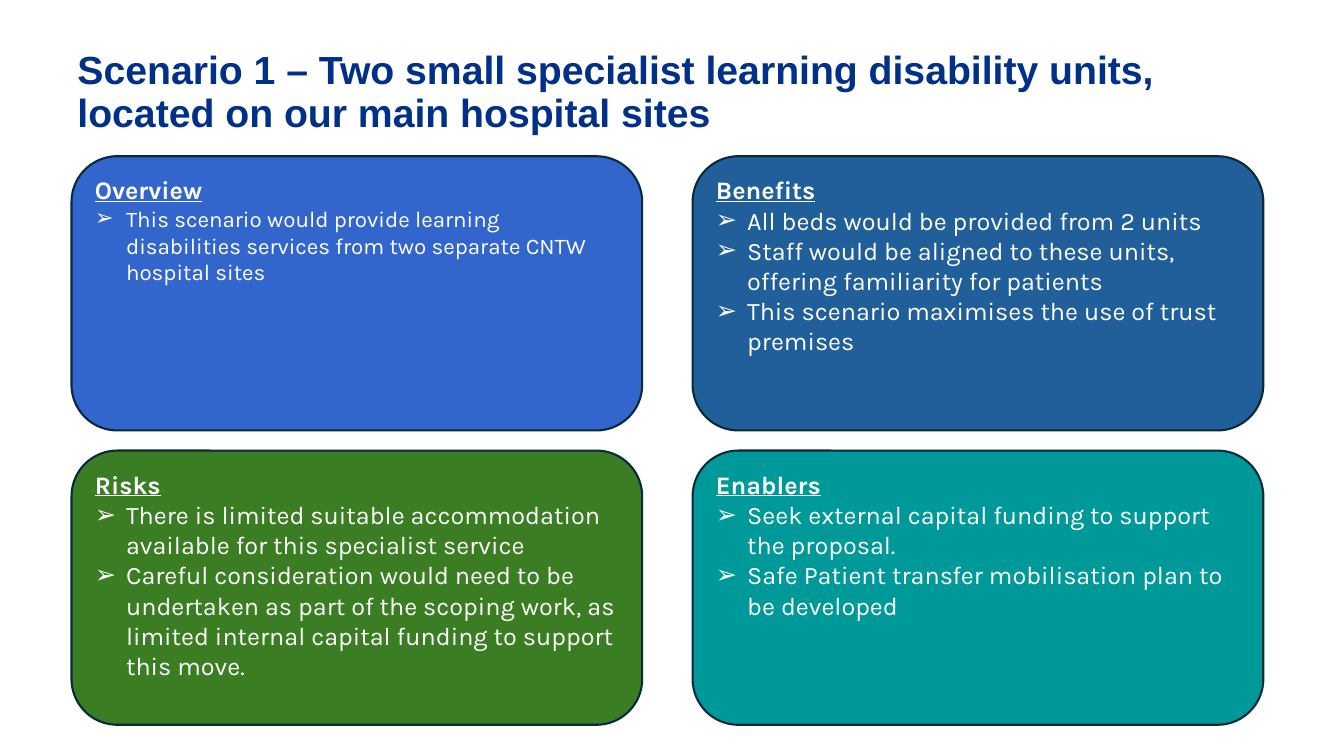
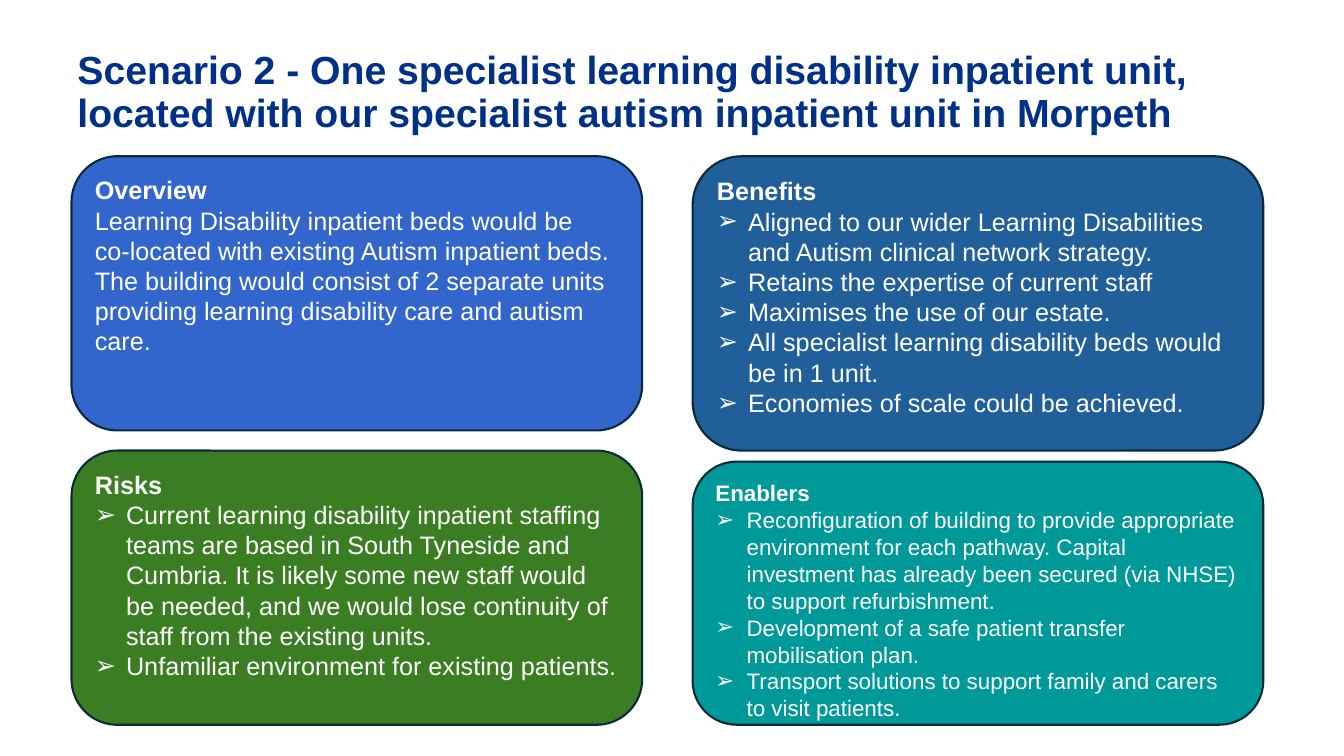
from dataclasses import dataclass

from lxml.etree import SubElement
from pptx import Presentation
from pptx.dml.color import RGBColor
from pptx.enum.shapes import MSO_SHAPE
from pptx.enum.text import MSO_ANCHOR, PP_ALIGN
from pptx.oxml.ns import qn
from pptx.util import Inches, Pt

NAVY = RGBColor(0x00, 0x30, 0x87)
OUTLINE = RGBColor(0x09, 0x2A, 0x39)
WHITE = RGBColor(0xFF, 0xFF, 0xFF)
BLUE = RGBColor(0x33, 0x66, 0xCC)
STEEL = RGBColor(0x21, 0x5F, 0x9A)
GREEN = RGBColor(0x3B, 0x7D, 0x23)
TEAL = RGBColor(0x00, 0x99, 0x99)
PANEL_FILLS = (BLUE, STEEL, GREEN, TEAL)

SLIDE_WIDTH, SLIDE_HEIGHT = 13.33, 7.5
TITLE_BOX = (0.67, 0.3, 12, 1.25)
GRID_LEFT, GRID_TOP = 0.71, 1.55
PANEL_WIDTH, PANEL_HEIGHT = 5.66, 2.72
COLUMN_GAP, ROW_GAP = 0.5, 0.2
BULLET_INDENT = 0.31


@dataclass
class Panel:
    heading: str
    points: tuple
    heading_size: int = 18
    point_size: int = 18
    bulleted: bool = True
    extend_bottom: float = 0
    lower_top: float = 0


@dataclass
class Scenario:
    title: str
    panels: tuple
    font: str = "Arial"
    underlined: bool = False


SCENARIOS = (
    Scenario(
        "Scenario 1 – Two small specialist learning disability units, "
        "located on our main hospital sites",
        (
            Panel("Overview", (
                "This scenario would provide learning disabilities services "
                "from two separate CNTW hospital sites",
            ), point_size=16),
            Panel("Benefits", (
                "All beds would be provided from 2 units",
                "Staff would be aligned to these units, offering familiarity for patients",
                "This scenario maximises the use of trust premises",
            )),
            Panel("Risks", (
                "There is limited suitable accommodation available for this "
                "specialist service",
                "Careful consideration would need to be undertaken as part of the "
                "scoping work, as limited internal capital funding to support this move.",
            )),
            Panel("Enablers", (
                "Seek external capital funding to support the proposal.",
                "Safe Patient transfer mobilisation plan to be developed",
            )),
        ),
        font="Karla",
        underlined=True,
    ),
    Scenario(
        "Scenario 2 - One specialist learning disability inpatient unit, "
        "located with our specialist autism inpatient unit in Morpeth",
        (
            Panel("Overview", (
                "Learning Disability inpatient beds would be \n"
                "co-located with existing Autism inpatient beds. The building would "
                "consist of 2 separate units providing learning disability care and "
                "autism care.",
            ), bulleted=False),
            Panel("Benefits", (
                "Aligned to our wider Learning Disabilities and Autism clinical "
                "network strategy.",
                "Retains the expertise of current staff",
                "Maximises the use of our estate.",
                "All specialist learning disability beds would be in 1 unit.",
                "Economies of scale could be achieved.",
            ), extend_bottom=0.2),
            Panel("Risks", (
                "Current learning disability inpatient staffing teams are based in "
                "South Tyneside and Cumbria. It is likely some new staff would be "
                "needed, and we would lose continuity of staff from the existing units.",
                "Unfamiliar environment for existing patients.",
            )),
            Panel("Enablers", (
                "Reconfiguration of building to provide appropriate environment for "
                "each pathway. Capital investment has already been secured (via NHSE) "
                "to support refurbishment.",
                "Development of a safe patient transfer mobilisation plan.",
                "Transport solutions to support family and carers to visit patients.",
            ), heading_size=16, point_size=16, lower_top=0.11),
        ),
    ),
)


def add_text(para, text, font, size, color, bold=False, underline=None):
    for number, line in enumerate(text.split("\n")):
        if number:
            para.add_line_break()
        span = para.add_run()
        span.text = line
        span.font.name = font
        span.font.size = Pt(size)
        span.font.color.rgb = color
        span.font.bold = bold
        span.font.underline = underline


def add_bullet(para):
    properties = para._p.get_or_add_pPr()
    properties.set("marL", str(Inches(BULLET_INDENT)))
    properties.set("indent", str(-Inches(BULLET_INDENT)))
    SubElement(properties, qn("a:buFont")).set("typeface", "Arial")
    SubElement(properties, qn("a:buChar")).set("char", "➢")


def draw_title(page, box, title):
    frame = page.shapes.add_textbox(*map(Inches, box)).text_frame
    frame.word_wrap = True
    frame.vertical_anchor = MSO_ANCHOR.MIDDLE
    para = frame.paragraphs[0]
    para.line_spacing = 0.9
    add_text(para, title, "Arial", 28, NAVY, bold=True)


def draw_panel(page, box, panel, fill, font, underlined):
    shape = page.shapes.add_shape(MSO_SHAPE.ROUNDED_RECTANGLE, *map(Inches, box))
    shape.shadow.inherit = False
    shape.fill.solid()
    shape.fill.fore_color.rgb = fill
    shape.line.color.rgb = OUTLINE
    shape.line.width = Pt(1.5)
    frame = shape.text_frame
    frame.word_wrap = True
    frame.vertical_anchor = MSO_ANCHOR.TOP
    heading = frame.paragraphs[0]
    heading.alignment = PP_ALIGN.LEFT
    add_text(heading, panel.heading, font, panel.heading_size, WHITE,
             bold=True, underline=underlined)
    for point in panel.points:
        para = frame.add_paragraph()
        para.alignment = PP_ALIGN.LEFT
        if panel.bulleted:
            add_bullet(para)
        add_text(para, point, font, panel.point_size, WHITE)


def draw_scenario(page, scenario):
    draw_title(page, TITLE_BOX, scenario.title)
    for number, (panel, fill) in enumerate(zip(scenario.panels, PANEL_FILLS)):
        row, column = divmod(number, 2)
        box = (
            GRID_LEFT + column * (PANEL_WIDTH + COLUMN_GAP),
            GRID_TOP + row * (PANEL_HEIGHT + ROW_GAP) + panel.lower_top,
            PANEL_WIDTH,
            PANEL_HEIGHT + panel.extend_bottom - panel.lower_top,
        )
        draw_panel(page, box, panel, fill, scenario.font, scenario.underlined)


def main():
    deck = Presentation()
    deck.slide_width = Inches(SLIDE_WIDTH)
    deck.slide_height = Inches(SLIDE_HEIGHT)
    for scenario in SCENARIOS:
        draw_scenario(deck.slides.add_slide(deck.slide_layouts[6]), scenario)
    deck.save("out.pptx")


if __name__ == "__main__":
    main()
